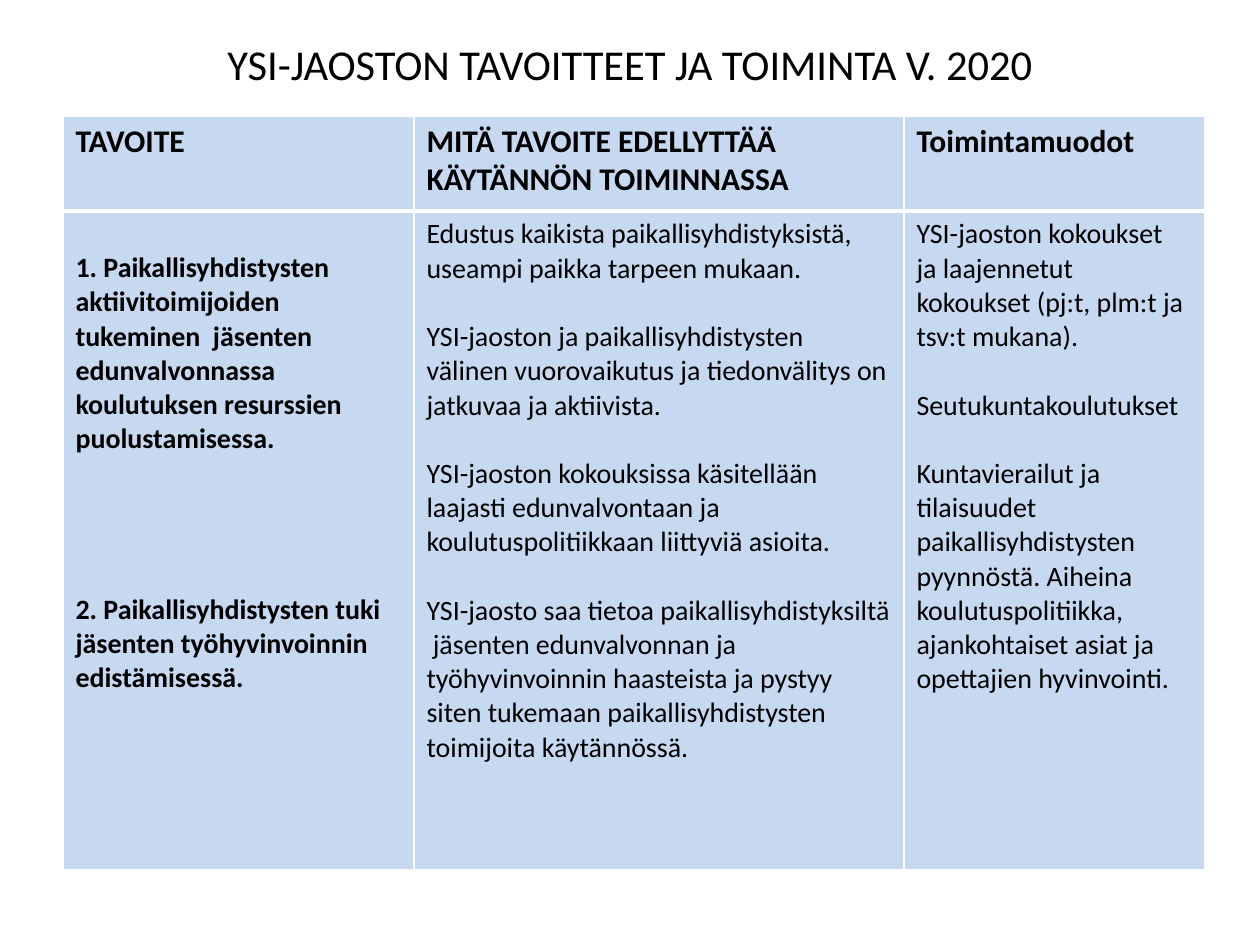
from dataclasses import dataclass

from lxml.etree import SubElement
from pptx import Presentation
from pptx.dml.color import RGBColor
from pptx.enum.text import MSO_ANCHOR, MSO_AUTO_SIZE, PP_ALIGN
from pptx.oxml import parse_xml
from pptx.oxml.ns import nsdecls, qn
from pptx.util import Pt

PX = 914400 // 126


@dataclass(frozen=True)
class Theme:
    font: str = "Calibri"
    ink: str = "000000"
    cell: str = "C6D9F1"
    rule: str = "FFFFFF"
    title_size: float = 24.3
    header_size: int = 18
    body_size: int = 16
    body_line: float = 19.5


theme = Theme()


def write(frame, text, first=False, size=theme.body_size, bold=False, align=PP_ALIGN.LEFT, gap=0):
    paragraph = frame.paragraphs[0] if first else frame.add_paragraph()
    paragraph.alignment = align
    paragraph.space_before = Pt(gap)
    run = paragraph.add_run()
    run.text = text
    run.font.name = theme.font
    run.font.size = Pt(size)
    run.font.bold = bold
    run.font.color.rgb = RGBColor.from_string(theme.ink)


def draw_borders(cell, top, bottom):
    properties = cell._tc.get_or_add_tcPr()
    sides = [("lnL", 1), ("lnR", 1), ("lnT", top), ("lnB", bottom)]
    for position, (side, points) in enumerate(sides):
        line = parse_xml(f'<a:{side} {nsdecls("a")} w="{Pt(points)}"/>')
        color = SubElement(SubElement(line, qn("a:solidFill")), qn("a:srgbClr"))
        color.set("val", theme.rule)
        properties.insert(position, line)


presentation = Presentation()
presentation.slide_width = 1260 * PX
presentation.slide_height = 945 * PX
slide = presentation.slides.add_slide(presentation.slide_layouts[5])

heading = slide.shapes.title
heading.left, heading.top, heading.width, heading.height = [n * PX for n in (63, 38, 1134, 58)]
heading_frame = heading.text_frame
heading_frame.auto_size = MSO_AUTO_SIZE.NONE
heading_frame.word_wrap = True
heading_frame.vertical_anchor = MSO_ANCHOR.MIDDLE
heading_frame.margin_top = 0
heading_frame.margin_bottom = 8 * PX
write(heading_frame, "YSI-JAOSTON TAVOITTEET JA TOIMINTA V. 2020", first=True,
      size=theme.title_size, align=PP_ALIGN.CENTER)

headers = [
    ["TAVOITE"],
    ["MITÄ TAVOITE EDELLYTTÄÄ", "KÄYTÄNNÖN TOIMINNASSA"],
    ["Toimintamuodot"],
]
goals = [
    (0, "1. Paikallisyhdistysten aktiivitoimijoiden tukeminen  jäsenten edunvalvonnassa "
        "koulutuksen resurssien puolustamisessa."),
    (4, "2. Paikallisyhdistysten tuki jäsenten työhyvinvoinnin edistämisessä."),
]
requirements = [
    (0, "Edustus kaikista paikallisyhdistyksistä, useampi paikka tarpeen mukaan."),
    (1, "YSI-jaoston ja paikallisyhdistysten välinen vuorovaikutus ja tiedonvälitys on "
        "jatkuvaa ja aktiivista."),
    (1, "YSI-jaoston kokouksissa käsitellään laajasti edunvalvontaan ja "
        "koulutuspolitiikkaan liittyviä asioita."),
    (1, "YSI-jaosto saa tietoa paikallisyhdistyksiltä  jäsenten edunvalvonnan ja "
        "työhyvinvoinnin haasteista ja pystyy siten tukemaan paikallisyhdistysten "
        "toimijoita käytännössä."),
]
activities = [
    (0, "YSI-jaoston kokoukset"),
    (0, "ja laajennetut kokoukset (pj:t, plm:t ja tsv:t mukana)."),
    (1, "Seutukuntakoulutukset"),
    (1, "Kuntavierailut ja tilaisuudet paikallisyhdistysten pyynnöstä. Aiheina "
        "koulutuspolitiikka, ajankohtaiset asiat ja opettajien hyvinvointi."),
]

column_widths = [351, 490, 301]
row_heights = [95, 659]
plan = slide.shapes.add_table(2, 3, 63 * PX, 116 * PX, sum(column_widths) * PX,
                              sum(row_heights) * PX).table
for column, width in zip(plan.columns, column_widths):
    column.width = width * PX
for row, height in zip(plan.rows, row_heights):
    row.height = height * PX

for index, lines in enumerate(headers):
    for number, line in enumerate(lines):
        write(plan.cell(0, index).text_frame, line, first=number == 0,
              size=theme.header_size, bold=True)

for index, entries in enumerate([goals, requirements, activities]):
    for number, (blank_lines, entry) in enumerate(entries):
        write(plan.cell(1, index).text_frame, entry, first=number == 0,
              bold=index == 0, gap=blank_lines * theme.body_line)
plan.cell(1, 0).margin_top = 40 * PX

for row_index, (top, bottom) in enumerate([(1, 3), (3, 1)]):
    for cell in plan.rows[row_index].cells:
        cell.fill.solid()
        cell.fill.fore_color.rgb = RGBColor.from_string(theme.cell)
        draw_borders(cell, top, bottom)

presentation.save("out.pptx")
